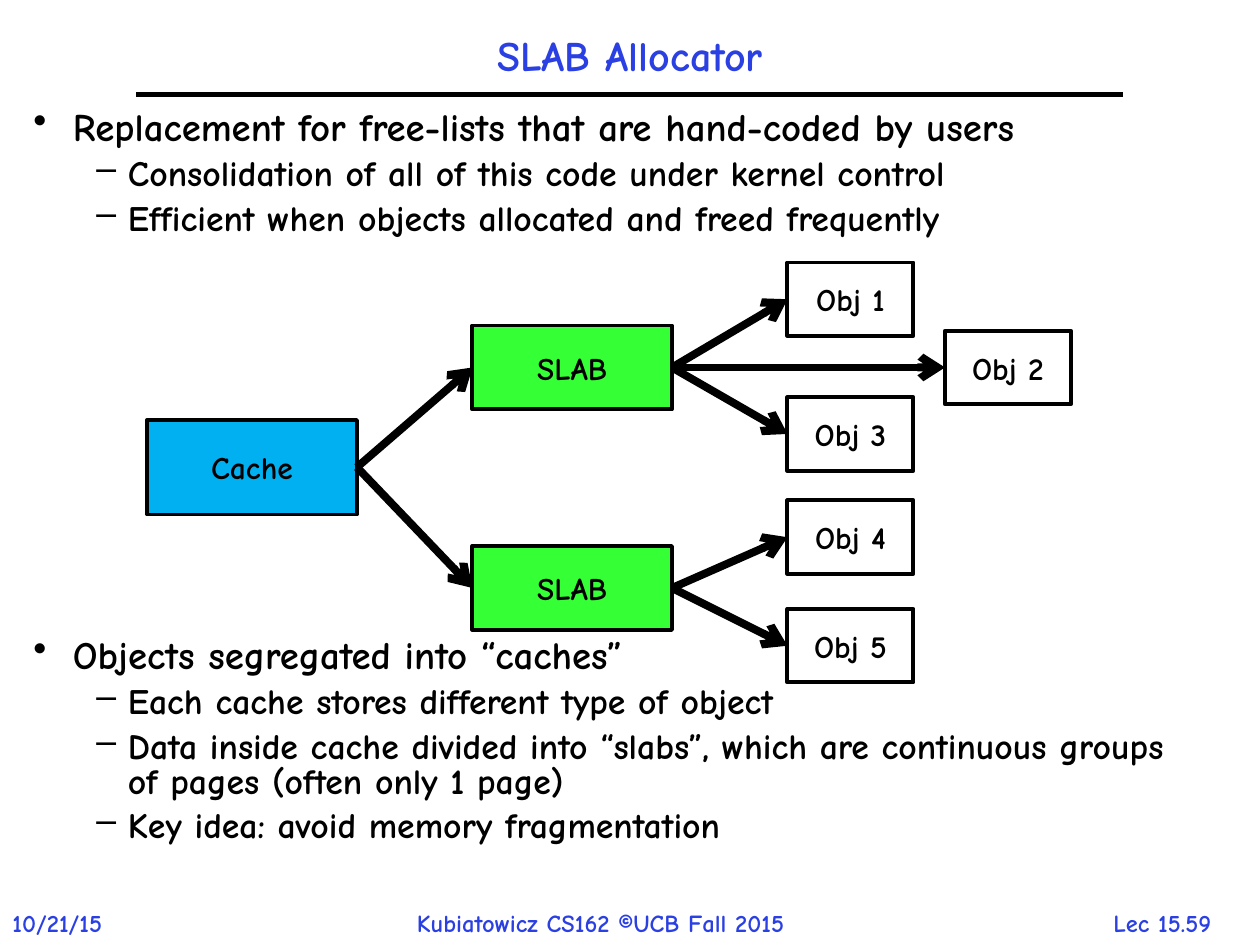
from dataclasses import dataclass

import pptx
import pptx.dml.color
import pptx.enum.shapes
import pptx.enum.text
import pptx.oxml
import pptx.oxml.ns
import pptx.util

Pt = pptx.util.Pt
Rgb = pptx.dml.color.RGBColor.from_string
Align = pptx.enum.text.PP_ALIGN
Anchor = pptx.enum.text.MSO_ANCHOR
RIGHT_SITE, LEFT_SITE = 3, 1


@dataclass(frozen=True)
class Theme:
    font: str = "Comic Neue"
    ink: str = "000000"
    accent: str = "2A40E2"
    cache: str = "00B0F0"
    slab: str = "35FF35"
    white: str = "FFFFFF"
    title: float = 24
    point: float = 22.2
    detail: float = 20.4
    label: float = 18
    footer: float = 14


THEME = Theme()


@dataclass(frozen=True)
class Level:
    size: float
    mark: str
    left: float
    hang: float
    before: float


POINT = Level(THEME.point, "•", 22.5, 22.5, 6.7)
DETAIL = Level(THEME.detail, "–", 54, 18, 6)
DIAGRAM_GAP = 229.5

BULLETS = [
    (POINT, "Replacement for free-lists that are hand-coded by users"),
    (DETAIL, "Consolidation of all of this code under kernel control"),
    (DETAIL, "Efficient when objects allocated and freed frequently"),
    (POINT, "Objects segregated into “caches”"),
    (DETAIL, "Each cache stores different type of object"),
    (DETAIL, "Data inside cache divided into “slabs”, which are continuous "
             "groups of pages (often only 1 page)"),
    (DETAIL, "Key idea: avoid memory fragmentation"),
]

FOOTERS = [
    ("10/21/15", 0, 80.6, Align.LEFT),
    ("Kubiatowicz CS162 ©UCB Fall 2015", 231.1, 260, Align.LEFT),
    ("Lec 15.59", 616.3, 95.8, Align.CENTER),
]

# Top of each slab, with the left and top of the objects it holds
SLABS = [
    (186, [("Obj 1", 450, 150), ("Obj 2", 540, 189), ("Obj 3", 450, 227)]),
    (312, [("Obj 4", 450, 286), ("Obj 5", 450, 348)]),
]


def style(para, size, color, align):
    para.alignment = align
    for run in para.runs:
        font = run.font
        font.name, font.size, font.bold = THEME.font, Pt(size), True
        font.color.rgb = Rgb(color)


def place(shape, *box):
    shape.left, shape.top, shape.width, shape.height = map(Pt, box)


def add_title(slide, text):
    title = slide.shapes.title
    place(title, 78, 12, 564, 42)
    frame = title.text_frame
    frame.text = text
    frame.vertical_anchor = Anchor.MIDDLE
    para = frame.paragraphs[0]
    para.line_spacing = 0.9
    style(para, THEME.title, THEME.accent, Align.CENTER)


def add_text(slide, *box):
    frame = slide.shapes.add_textbox(*map(Pt, box)).text_frame
    frame.word_wrap = True
    return frame


def add_footer(slide, text, left, width, align):
    frame = add_text(slide, left, 515.5, width, 24)
    frame.text = text
    style(frame.paragraphs[0], THEME.footer, THEME.accent, align)


def set_bullet(para, level):
    props = para._p.get_or_add_pPr()
    props.set("marL", str(Pt(level.left)))
    props.set("indent", str(-Pt(level.hang)))
    mark = pptx.oxml.parse_xml(
        f'<a:buChar {pptx.oxml.ns.nsdecls("a")} char="{level.mark}"/>')
    props.append(mark)


def add_bullets(slide, items):
    """Write the list, leaving room for the diagram before its second point."""
    frame = add_text(slide, 12, 60, 672, 480)
    frame.text = "\n".join(text for _, text in items)
    for index, (para, (level, _)) in enumerate(zip(frame.paragraphs, items)):
        split = index > 0 and level is POINT
        para.line_spacing = 0.8
        para.space_before = Pt(DIAGRAM_GAP if split else level.before)
        para.level = 0 if level is POINT else 1
        set_bullet(para, level)
        style(para, level.size, THEME.ink, Align.LEFT)


def add_box(slide, text, fill, *box):
    kind = pptx.enum.shapes.MSO_SHAPE.RECTANGLE
    shape = slide.shapes.add_shape(kind, *map(Pt, box))
    shape.shadow.inherit = False
    shape.fill.solid()
    shape.fill.fore_color.rgb = Rgb(fill)
    shape.line.color.rgb = Rgb(THEME.ink)
    shape.line.width = Pt(2.25)
    frame = shape.text_frame
    frame.text = text
    frame.vertical_anchor = Anchor.MIDDLE
    style(frame.paragraphs[0], THEME.label, THEME.ink, Align.CENTER)
    return shape


def add_line(slide, width, *ends):
    kind = pptx.enum.shapes.MSO_CONNECTOR.STRAIGHT
    line = slide.shapes.add_connector(kind, *map(Pt, ends))
    line.line.color.rgb = Rgb(THEME.ink)
    line.line.width = Pt(width)
    line._element.spPr.append(pptx.oxml.parse_xml(
        f'<a:effectLst {pptx.oxml.ns.nsdecls("a")}/>'))
    return line


def add_arrow(slide, start, end):
    line = add_line(slide, 4.5, 0, 0, 0, 0)
    line.begin_connect(start, RIGHT_SITE)
    line.end_connect(end, LEFT_SITE)
    line.line._get_or_add_ln().append(pptx.oxml.parse_xml(
        f'<a:tailEnd {pptx.oxml.ns.nsdecls("a")} type="arrow"/>'))


def add_diagram(slide):
    cache = add_box(slide, "Cache", THEME.cache, 84, 240, 120, 54)
    for top, objects in SLABS:
        slab = add_box(slide, "SLAB", THEME.slab, 270, top, 114, 48)
        add_arrow(slide, cache, slab)
        for text, left, y in objects:
            obj = add_box(slide, text, THEME.white, left, y, 72, 42)
            add_arrow(slide, slab, obj)


def main():
    deck = pptx.Presentation()
    deck.slide_width, deck.slide_height = Pt(720), Pt(540)
    slide = deck.slides.add_slide(deck.slide_layouts.get_by_name("Title Only"))
    add_title(slide, "SLAB Allocator")
    add_line(slide, 3, 78, 54, 642, 54)
    for footer in FOOTERS:
        add_footer(slide, *footer)
    add_bullets(slide, BULLETS)
    add_diagram(slide)
    deck.save("out.pptx")


if __name__ == "__main__":
    main()
